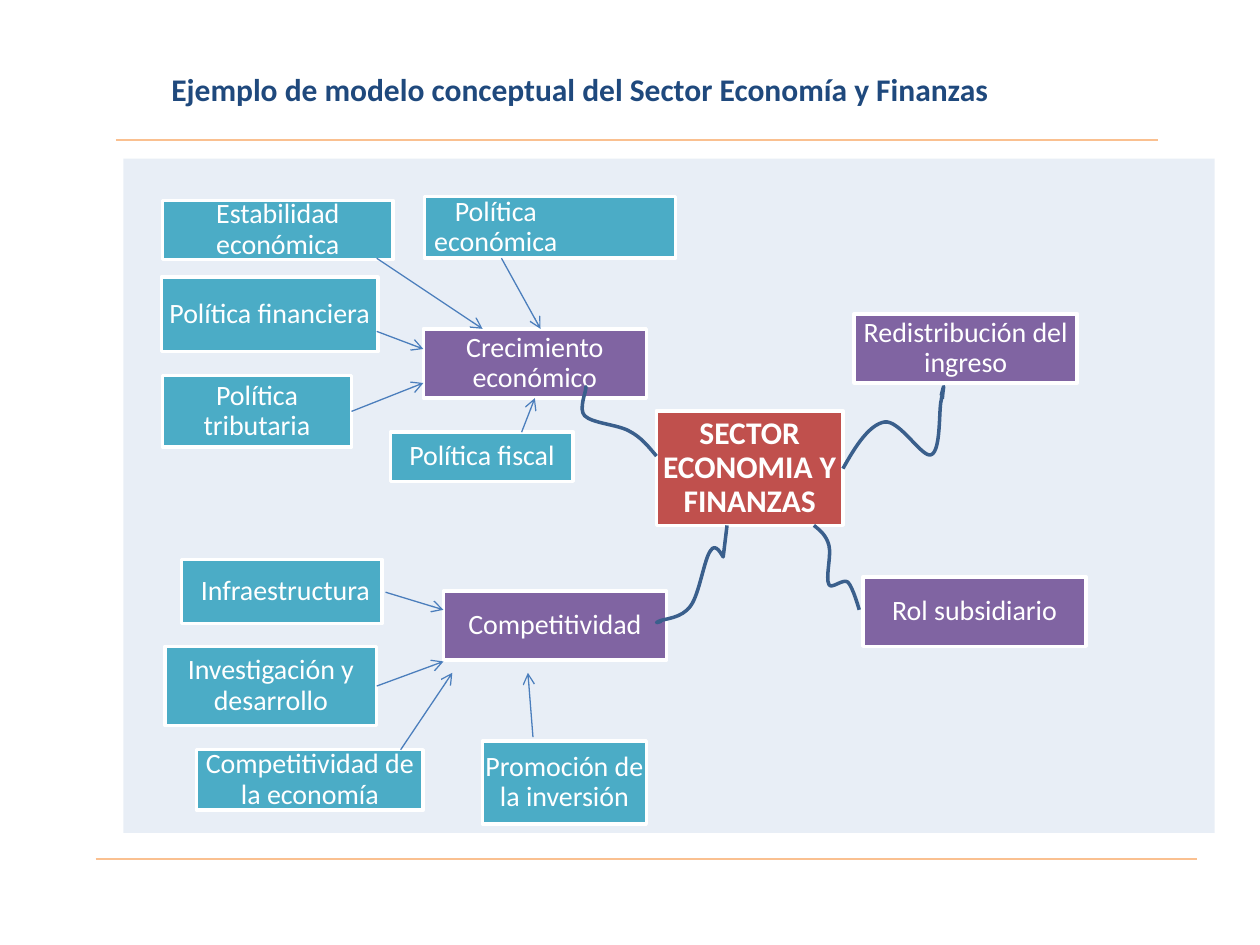
import pptx
import pptx.util
import pptx.dml.color
import pptx.enum.shapes
import pptx.enum.text
import pptx.oxml
import pptx.oxml.ns

Inches, Pt = pptx.util.Inches, pptx.util.Pt
qn = pptx.oxml.ns.qn
MID = pptx.enum.text.MSO_ANCHOR.MIDDLE
ALIGN = pptx.enum.text.PP_ALIGN
RECT = pptx.enum.shapes.MSO_SHAPE.RECTANGLE
STRAIGHT = pptx.enum.shapes.MSO_CONNECTOR.STRAIGHT

THEME = {
    "font": "Calibri", "big": 18, "text": 16,
    "title": "1F497D", "white": "FFFFFF", "panel": "4F81BD",
    "core": "C0504D", "goal": "8064A2", "topic": "4BACC6",
    "arrow": "4B7EBC", "curve": "3A5F8C", "rule": "FAC090",
}
TITLE = "Ejemplo de modelo conceptual del Sector Economía y Finanzas"
PANEL = (0.98, 1.26, 8.66, 5.35)
GOAL = (1.77, 0.55)  # width and height shared by the goals

# kind, text, (left, top, width, height), extra (left, right) inset
BOXES = [
    ("core", "SECTOR ECONOMIA Y FINANZAS", (5.21, 3.26, 1.48, 0.91), (0, 0)),
    ("goal", "Crecimiento económico", (3.36, 2.61, *GOAL), (0, 0)),
    ("goal", "Redistribución del ingreso", (6.78, 2.49, *GOAL), (0, 0)),
    ("goal", "Competitividad", (3.52, 4.69, *GOAL), (0, 0)),
    ("goal", "Rol subsidiario", (6.85, 4.58, *GOAL), (0, 0)),
    ("topic", "Estabilidad económica", (1.29, 1.59, 1.83, 0.47), (0, 0)),
    ("topic", "Política económica", (3.37, 1.56, 1.99, 0.49), (0, 0.86)),
    ("topic", "Política financiera", (1.28, 2.2, 1.72, 0.59), (0, 0)),
    ("topic", "Política tributaria", (1.29, 2.98, 1.5, 0.57), (0, 0)),
    ("topic", "Política fiscal", (3.1, 3.43, 1.45, 0.39), (0, 0)),
    ("topic", "Competitividad de la economía", (1.56, 5.95, 1.8, 0.48), (0, 0)),
    ("topic", "Promoción de la inversión", (3.83, 5.88, 1.3, 0.66), (0, 0)),
    ("topic", "Investigación y desarrollo", (1.31, 5.13, 1.68, 0.63), (0, 0)),
    ("topic", "Infraestructura", (1.44, 4.44, 1.59, 0.51), (0.06, 0)),
]
# Start point, then segments: 2 numbers for a line, 6 for a Bezier curve
CURVES = [
    ((6.69, 3.72), [
        (6.79, 3.54, 6.9, 3.37, 7.02, 3.35), (7.14, 3.33, 7.32, 3.64, 7.39, 3.61),
        (7.47, 3.58, 7.45, 3.25, 7.47, 3.18), (7.48, 3.1, 7.48, 3.18, 7.48, 3.16),
        (7.48, 3.14, 7.49, 3.07, 7.49, 3.07), (7.49, 3.06, 7.48, 3.1, 7.47, 3.14)]),
    ((6.46, 4.17), [
        (6.51, 4.21, 6.56, 4.25, 6.58, 4.33), (6.6, 4.41, 6.55, 4.59, 6.58, 4.64),
        (6.6, 4.68, 6.69, 4.59, 6.73, 4.62), (6.77, 4.66, 6.82, 4.84, 6.82, 4.84)]),
    ((5.77, 4.17), [
        (5.74, 4.42), (5.73, 4.41, 5.68, 4.3, 5.64, 4.37),
        (5.59, 4.43, 5.55, 4.72, 5.48, 4.81), (5.41, 4.91, 5.27, 4.91, 5.23, 4.93),
        (5.19, 4.95, 5.22, 4.94, 5.25, 4.93)]),
    ((5.21, 3.62), [
        (5.15, 3.55, 5.09, 3.47, 4.99, 3.42), (4.9, 3.37, 4.7, 3.36, 4.64, 3.3),
        (4.59, 3.25, 4.65, 3.11, 4.65, 3.08), (4.65, 3.05, 4.65, 3.09, 4.64, 3.13)]),
]
# From, to, and the (box, side) joined at each end, if any
ARROWS = [
    ((3.98, 2.05), (4.29, 2.61), None, None),
    ((4.14, 3.43), (4.24, 3.16), None, ("Crecimiento económico", 2)),
    ((2.79, 3.26), (3.36, 3.04), ("Política tributaria", 3), None),
    ((2.99, 2.05), (3.83, 2.61), None, None),
    ((2.99, 2.63), (3.36, 2.77), None, None),
    ((3.06, 4.7), (3.52, 4.84), None, None),
    ((2.99, 5.44), (3.52, 5.25), ("Investigación y desarrollo", 3), None),
    ((3.18, 5.95), (3.59, 5.34), None, None),
    ((4.23, 5.85), (4.19, 5.34), None, None),
]
RULES = [((0.92, 1.11), (9.19, 1.11)), ((0.76, 6.82), (9.5, 6.82))]


def color(name):
    return pptx.dml.color.RGBColor.from_string(THEME[name])


def make(tag, **attrs):
    item = pptx.oxml.parse_xml(f"<a:{tag} {pptx.oxml.ns.nsdecls('a')}/>")
    for key, value in attrs.items():
        item.set(key, value)
    return item


def stroke(shape, name, width):
    shape.line.color.rgb = color(name)
    shape.line.width = Pt(width)


def write(shape, text, size="text", ink="white", bold=False,
          align=ALIGN.CENTER, space=0.9, pad=None):
    frame = shape.text_frame
    frame.word_wrap = True
    frame.auto_size = pptx.enum.text.MSO_AUTO_SIZE.NONE
    frame.vertical_anchor = MID
    if pad:
        frame.margin_left, frame.margin_right = (Inches(0.01 + x) for x in pad)
        frame.margin_top = frame.margin_bottom = Inches(0.01)
    para = frame.paragraphs[0]
    para.alignment, para.line_spacing = align, space
    run = para.add_run()
    run.text = text
    font = run.font
    font.name, font.size, font.bold = THEME["font"], Pt(THEME[size]), bold
    font.color.rgb = color(ink)


def block(slide, area, fill):
    shape = slide.shapes.add_shape(RECT, *map(Inches, area))
    shape.shadow.inherit = False
    shape.fill.solid()
    shape.fill.fore_color.rgb = color(fill)
    return shape


def link(slide, start, end, ink, width, head=False):
    line = slide.shapes.add_connector(STRAIGHT, *map(Inches, start + end))
    stroke(line, ink, width)
    props = line._element.spPr
    if head:
        props.find(qn("a:ln")).append(make("tailEnd", type="arrow"))
    props.append(make("effectLst"))
    return line


def curve(slide, start, parts):
    """Lay every knot as a line point, then fold each three into a Bezier."""
    knots = [tuple(map(Inches, part[i:i + 2]))
             for part in parts for i in range(0, len(part), 2)]
    draft = slide.shapes.build_freeform(*map(Inches, start), scale=1.0)
    draft.add_line_segments(knots, close=False)
    shape = draft.convert_to_shape()
    shape.shadow.inherit = False
    shape.fill.background()
    stroke(shape, "curve", 2)

    steps = iter(list(shape._element.iter(qn("a:lnTo"))))
    for part in parts:
        step = next(steps)
        if len(part) == 2:
            continue
        bend = make("cubicBezTo")
        step.addprevious(bend)
        for item in (step, next(steps), next(steps)):
            bend.append(item[0])
            item.getparent().remove(item)


def main():
    deck = pptx.Presentation()
    deck.slide_width, deck.slide_height = Inches(10), Inches(7.5)
    slide = deck.slides.add_slide(deck.slide_layouts[5])

    title = slide.shapes.title
    title.left, title.top, title.width, title.height = map(
        Inches, (1.26, 0.47, 7.64, 0.47))
    write(title, TITLE, size="big", ink="title", bold=True,
          align=ALIGN.LEFT, space=1.0)

    panel = block(slide, PANEL, "panel")
    panel.line.fill.background()
    tint = panel._element.spPr.find(".//" + qn("a:srgbClr"))
    tint.append(make("alpha", val="13000"))

    boxes = {}
    for kind, text, area, pad in BOXES:
        box = boxes[text] = block(slide, area, kind)
        stroke(box, "white", 2)
        core = kind == "core"
        write(box, text, size="big" if core else "text", bold=core, pad=pad)

    for start, parts in CURVES:
        curve(slide, start, parts)
    for start, end, tail, head in ARROWS:
        line = link(slide, start, end, "arrow", 0.75, head=True)
        if tail:
            line.begin_connect(boxes[tail[0]], tail[1])
        if head:
            line.end_connect(boxes[head[0]], head[1])
    for start, end in RULES:
        link(slide, start, end, "rule", 1.25)

    deck.save("out.pptx")


if __name__ == "__main__":
    main()
